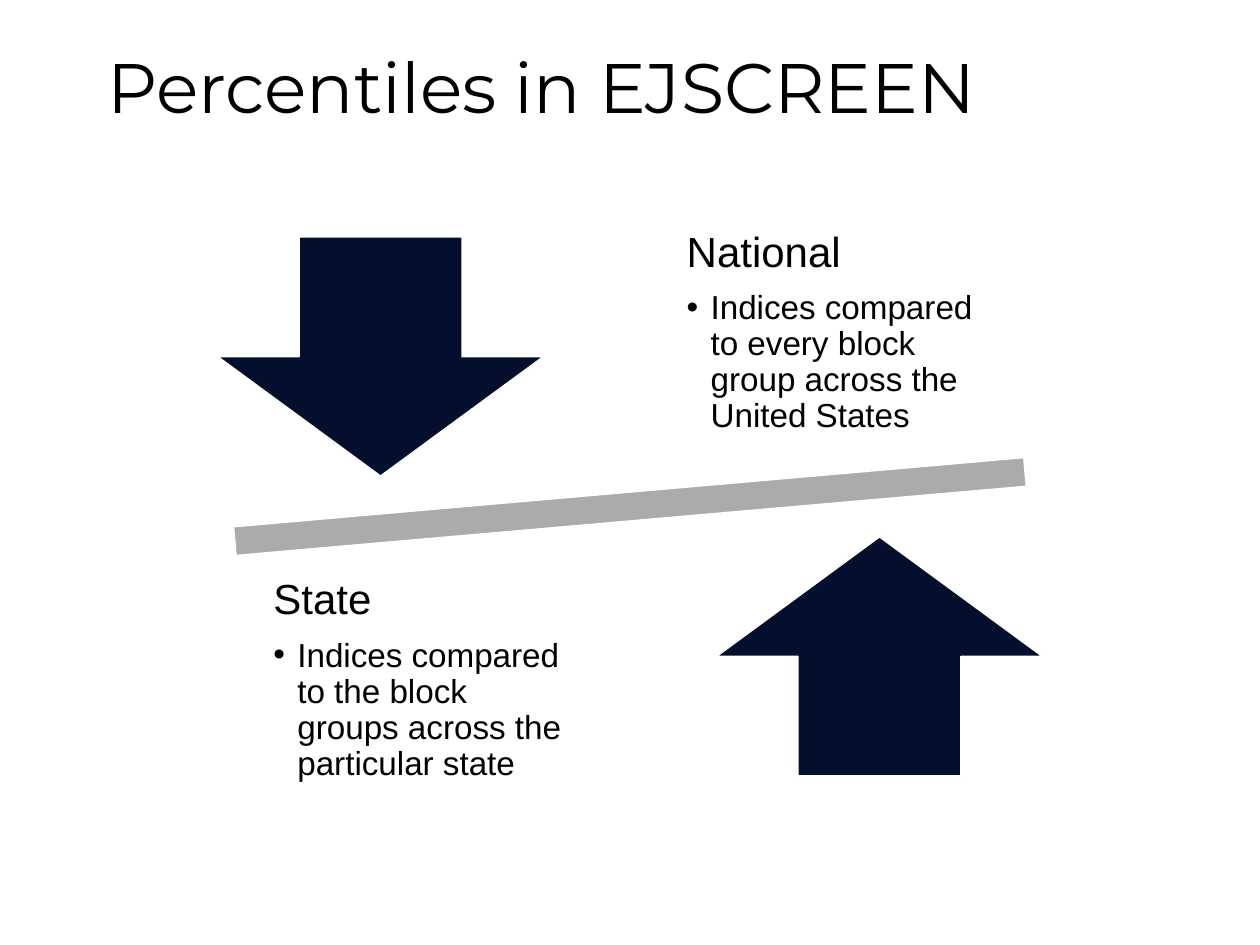
from dataclasses import dataclass

from lxml import etree
from pptx import Presentation
from pptx.dml.color import RGBColor
from pptx.enum.shapes import MSO_SHAPE
from pptx.enum.text import MSO_ANCHOR, MSO_AUTO_SIZE, PP_ALIGN
from pptx.oxml.ns import qn
from pptx.util import Inches, Pt

DOWN, UP, MINUS = MSO_SHAPE.DOWN_ARROW, MSO_SHAPE.UP_ARROW, MSO_SHAPE.MATH_MINUS
MIDDLE, NO_FIT, LEFT = MSO_ANCHOR.MIDDLE, MSO_AUTO_SIZE.NONE, PP_ALIGN.LEFT
TWO_CONTENT = 3
SLIDE_W, SLIDE_H = Inches(10), Inches(7.5)


@dataclass(frozen=True)
class Theme:
    ink: RGBColor = RGBColor(0x00, 0x00, 0x00)
    arrow: RGBColor = RGBColor(0x04, 0x0F, 0x2D)
    bar: RGBColor = RGBColor(0xAB, 0xAB, 0xAD)
    edge: RGBColor = RGBColor(0xFF, 0xFF, 0xFF)
    title_font: str = "Montserrat"
    body_font: str = "Arial"
    title_size: int = 40
    heading_size: int = 24
    bullet_size: int = 19


@dataclass(frozen=True)
class Side:
    """One end of the balance; direction is -1 above the bar and 1 below it."""
    heading: str
    detail: str
    arrow: MSO_SHAPE
    direction: int


THEME = Theme()
SIDES = [
    Side("National", "Indices compared to every block group across the United States", DOWN, -1),
    Side("State", "Indices compared to the block groups across the particular state", UP, 1),
]

# Everything is placed by its offset from the middle of the bar.
PIVOT = (5.0, 4.02)
BAR_SIZE = (8.57, 0.98)
ARROW_SIZE, ARROW_OFFSET = (2.59, 1.9), (1.98, 1.19)
TEXT_SIZE, TEXT_OFFSET = (2.76, 2.0), (-1.64, 1.38)
INSET = Inches(0.19)


def set_all(target, **values) -> None:
    for name, value in values.items():
        setattr(target, name, value)


def box(size: tuple, offset: tuple = (0, 0), direction: int = 1) -> list:
    """Left, top, width and height of a box centred at an offset from the pivot."""
    corner = [p + direction * o - d / 2 for p, o, d in zip(PIVOT, offset, size)]
    return [Inches(v) for v in (*corner, *size)]


def place(sp, bounds: list) -> None:
    set_all(sp, **dict(zip(("left", "top", "width", "height"), bounds)))


def add_outlined_shape(s, kind: MSO_SHAPE, bounds: list, color: RGBColor):
    sp = s.shapes.add_shape(kind, *bounds)
    sp.shadow.inherit = False
    sp.fill.solid()
    sp.fill.fore_color.rgb = color
    sp.line.color.rgb = THEME.edge
    sp.line.width = Pt(1)
    return sp


def write(p, text: str, font: str, size: int, after: float = 0) -> None:
    set_all(p, alignment=LEFT, line_spacing=0.9, space_before=Pt(0), space_after=Pt(after))
    r = p.add_run()
    r.text = text
    set_all(r.font, name=font, size=Pt(size), bold=False)
    r.font.color.rgb = THEME.ink


def set_bullet(p, char: str = "", indent: int = 0) -> None:
    pPr = p._p.get_or_add_pPr()
    pPr.set("marL", str(indent))
    pPr.set("indent", str(-indent))
    if char:
        etree.SubElement(pPr, qn("a:buChar")).set("char", char)
    else:
        etree.SubElement(pPr, qn("a:buNone"))


def fill_side(s, sp, side: Side) -> None:
    add_outlined_shape(s, side.arrow, box(ARROW_SIZE, ARROW_OFFSET, side.direction), THEME.arrow)
    place(sp, box(TEXT_SIZE, TEXT_OFFSET, side.direction))
    tf = sp.text_frame
    set_all(tf, word_wrap=True, auto_size=NO_FIT, vertical_anchor=MIDDLE,
            margin_left=INSET, margin_right=INSET, margin_top=INSET, margin_bottom=INSET)
    heading, detail = tf.paragraphs[0], tf.add_paragraph()
    detail.level = 1
    set_bullet(heading)
    set_bullet(detail, "•", INSET)
    write(heading, side.heading, THEME.body_font, THEME.heading_size, after=0.35 * THEME.heading_size)
    write(detail, side.detail, THEME.body_font, THEME.bullet_size, after=0.15 * THEME.bullet_size)


def main() -> None:
    prs = Presentation()
    set_all(prs, slide_width=SLIDE_W, slide_height=SLIDE_H)
    s = prs.slides.add_slide(prs.slide_layouts[TWO_CONTENT])
    title, *bodies = s.placeholders

    place(title, [Inches(v) for v in (0.75, 0, 8.62, 1.45)])
    set_all(title.text_frame, word_wrap=True, auto_size=NO_FIT, vertical_anchor=MIDDLE)
    write(title.text_frame.paragraphs[0], "Percentiles in EJSCREEN", THEME.title_font, THEME.title_size)

    bar = add_outlined_shape(s, MINUS, box(BAR_SIZE), THEME.bar)
    bar.rotation = 355
    for sp, side in zip(bodies, SIDES):
        fill_side(s, sp, side)
    prs.save("out.pptx")


if __name__ == "__main__":
    main()
